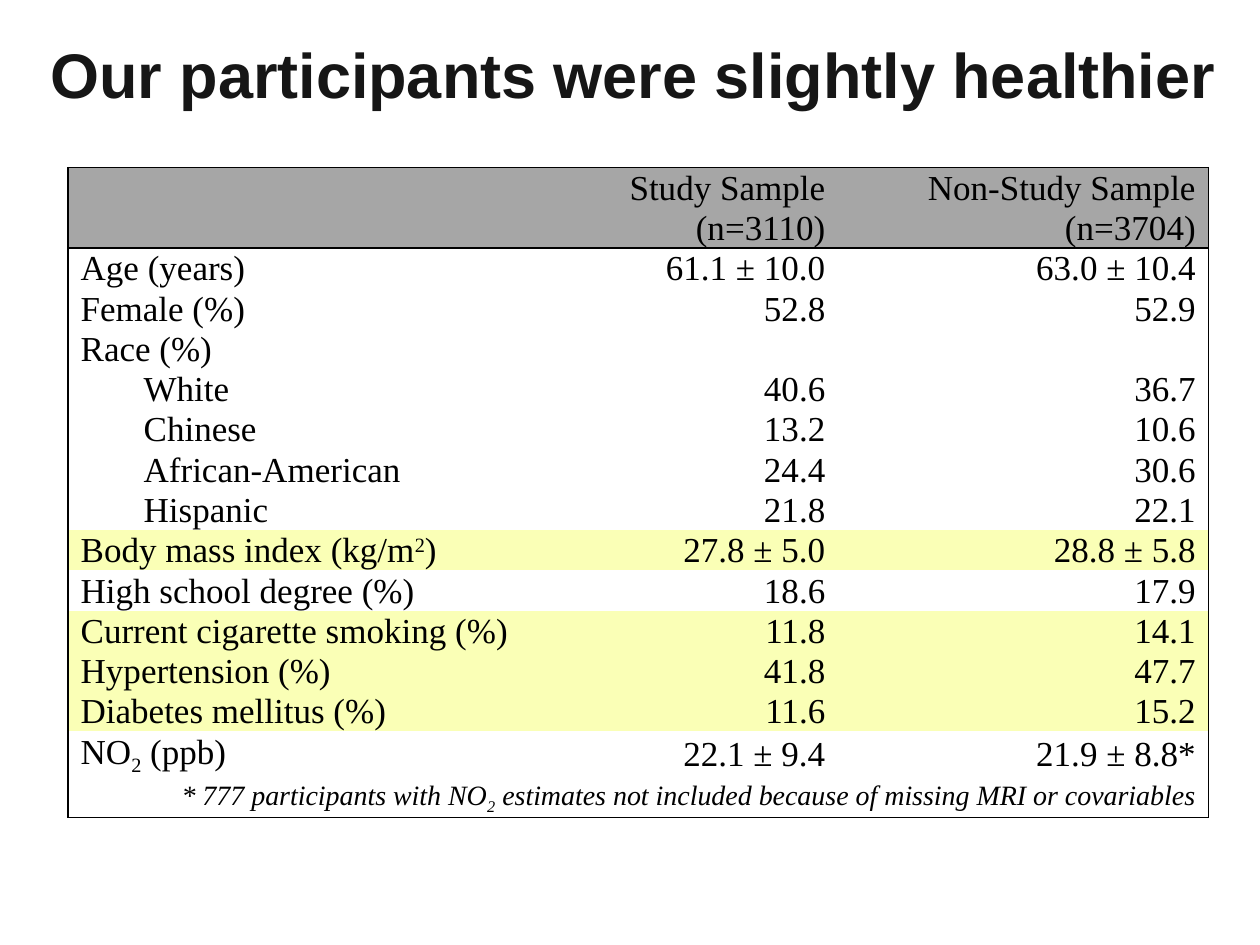
import pptx
import pptx.util
import pptx.dml.color
import pptx.enum.text
import pptx.oxml
import pptx.oxml.ns

COLORS = {"title": "161616", "text": "000000", "line": "000000",
          "header": "A6A6A6", "plain": "FFFFFF", "highlight": "FAFFB6"}
ALIGN = pptx.enum.text.PP_ALIGN
ANCHOR = pptx.enum.text.MSO_ANCHOR

# A label is a string, or a list of strings and (text, baseline percent) pairs.
HEADER = [("", "Study Sample", "Non-Study Sample"),
          ("", "(n=3110)", "(n=3704)")]
BODY = [
    ("Age (years)", "61.1 ± 10.0", "63.0 ± 10.4"),
    ("Female (%)", "52.8", "52.9"),
    ("Race (%)", "", ""),
    ("White", "40.6", "36.7"),
    ("Chinese", "13.2", "10.6"),
    ("African-American", "24.4", "30.6"),
    ("Hispanic", "21.8", "22.1"),
    (["Body mass index (kg/m", ("2", 30), ")"], "27.8 ± 5.0", "28.8 ± 5.8"),
    ("High school degree (%)", "18.6", "17.9"),
    ("Current cigarette smoking (%)", "11.8", "14.1"),
    ("Hypertension (%)", "41.8", "47.7"),
    ("Diabetes mellitus (%)", "11.6", "15.2"),
    (["NO", ("2", -25), " (ppb)"], "22.1 ± 9.4", "21.9 ± 8.8*"),
]
FOOTNOTE = ["* 777 participants with NO", ("2", -25),
            " estimates not included because of missing MRI or covariables"]
RACES = range(5, 9)
HIGHLIGHTED = {9, 11, 12, 13}


def add_text(p, text, font="Times New Roman", size=20, color="text",
             bold=False, italic=False, align=ALIGN.LEFT, indent=0):
    p.alignment = align
    if indent:
        p.level = 1
        p_pr = p._p.get_or_add_pPr()
        p_pr.set("marL", str(pptx.util.Inches(indent)))
        p_pr.set("indent", "0")
    for part in [text] if isinstance(text, str) else text:
        words, baseline = (part, 0) if isinstance(part, str) else part
        if not words:
            continue
        r = p.add_run()
        r.text = words
        r.font.name, r.font.size = font, pptx.util.Pt(size)
        r.font.bold, r.font.italic = bold, italic
        r.font.color.rgb = pptx.dml.color.RGBColor.from_string(COLORS[color])
        if baseline:
            r._r.get_or_add_rPr().set("baseline", str(baseline * 1000))


def set_borders(cell, edges):
    """Draw the named edges (letters out of LRTB) and clear the others."""
    tc_pr = cell._tc.get_or_add_tcPr()
    ns = pptx.oxml.ns.nsdecls("a")
    for edge in "LRTB":
        fill = (f'<a:solidFill><a:srgbClr val="{COLORS["line"]}"/></a:solidFill>'
                if edge in edges else "<a:noFill/>")
        tc_pr.append(pptx.oxml.parse_xml(
            f'<a:ln{edge} {ns} w="{pptx.util.Pt(1)}">{fill}</a:ln{edge}>'))


class Deck:
    """Holds the style and the current slide; lengths are in grid units."""

    COLUMNS, ROWS = 100, 75

    def __init__(self, width=10, height=7.5):
        self.prs = pptx.Presentation()
        self.prs.slide_width = pptx.util.Inches(width)
        self.prs.slide_height = pptx.util.Inches(height)
        self.s = self.prs.slides.add_slide(self.prs.slide_layouts[5])

    def x(self, columns):
        return round(self.prs.slide_width * columns / self.COLUMNS)

    def y(self, rows):
        return round(self.prs.slide_height * rows / self.ROWS)

    def title(self, text, left, top, width, height):
        sp = self.s.shapes.title
        sp.left, sp.top = self.x(left), self.y(top)
        sp.width, sp.height = self.x(width), self.y(height)
        tf = sp.text_frame
        tf.word_wrap = True
        tf.vertical_anchor = ANCHOR.MIDDLE
        p = tf.paragraphs[0]
        p.line_spacing = 0.9
        add_text(p, text, font="Arial", size=36, color="title", bold=True)

    def cell(self, cell, text, fill, edges, anchor=ANCHOR.MIDDLE, **style):
        cell.margin_left = cell.margin_right = pptx.util.Inches(0.1)
        cell.margin_top, cell.margin_bottom = pptx.util.Inches(0.01), 0
        cell.vertical_anchor = anchor
        set_borders(cell, edges)
        cell.fill.solid()
        cell.fill.fore_color.rgb = pptx.dml.color.RGBColor.from_string(COLORS[fill])
        add_text(cell.text_frame.paragraphs[0], text, **style)

    def table(self, left, top, widths, row_height):
        rows = HEADER + BODY + [(FOOTNOTE, "", "")]
        last_row, last_col = len(rows) - 1, len(widths) - 1
        table = self.s.shapes.add_table(
            len(rows), len(widths), self.x(left), self.y(top),
            self.x(sum(widths)), self.y(row_height * len(rows))).table
        for column, width in zip(table.columns, widths):
            column.width = self.x(width)
        for i, row in enumerate(rows):
            table.rows[i].height = self.y(row_height)
            is_header, is_note = i < len(HEADER), i == last_row
            fill = ("header" if is_header else
                    "highlight" if i in HIGHLIGHTED else "plain")
            for j, text in enumerate(row):
                edges = (("L" if j == 0 else "")
                         + ("R" if j == last_col or is_note and j == 0 else "")
                         + ("T" if i in (0, len(HEADER)) else "")
                         + ("B" if i in (len(HEADER) - 1, last_row) else ""))
                self.cell(table.cell(i, j), text, fill, edges,
                          anchor=ANCHOR.BOTTOM if is_header else ANCHOR.MIDDLE,
                          size=16 if is_note else 20, italic=is_note,
                          align=ALIGN.RIGHT if j or is_note else ALIGN.LEFT,
                          indent=0.5 if j == 0 and i in RACES else 0)
        table.cell(last_row, 0).merge(table.cell(last_row, last_col))


def main():
    deck = Deck()
    deck.title("Our participants were slightly healthier", 3, 2.9, 97, 6.6)
    deck.table(5.4, 13.3, widths=(42.1, 19, 29.4), row_height=3.2)
    deck.prs.save("out.pptx")


if __name__ == "__main__":
    main()
